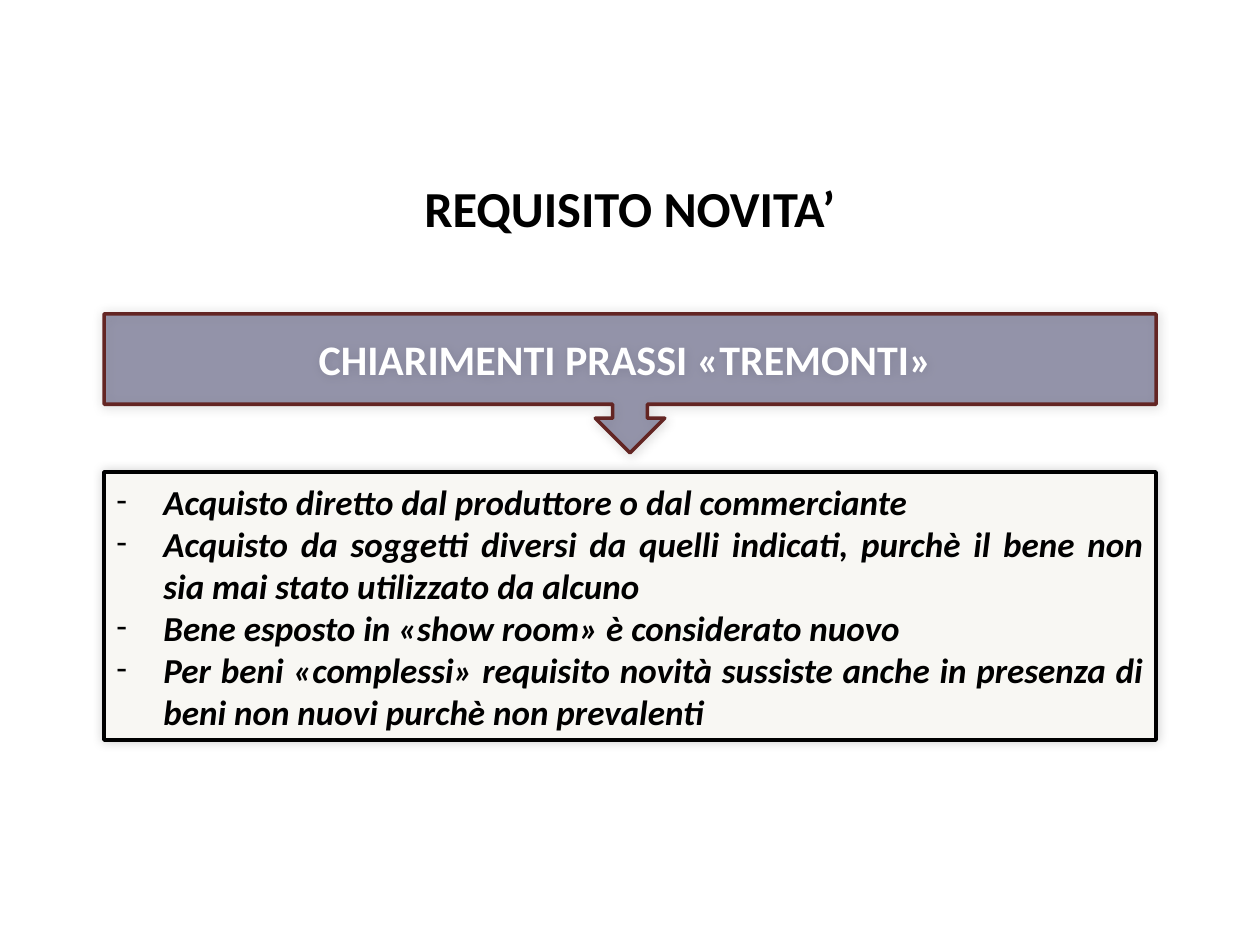
"""Build the slide on the novelty requirement, with a callout and a list of clarifications."""
from lxml import etree
from pptx import Presentation
from pptx import util as u
from pptx.dml.color import RGBColor
from pptx.enum import shapes, text
from pptx.oxml.ns import qn

PX = u.Inches(1) / 126
COLORS = {"black": "000000", "white": "FFFFFF", "navy": "19194D", "maroon": "632523", "cream": "F8F7F3"}
CLARIFICATIONS = [
    "Acquisto diretto dal produttore o dal commerciante",
    "Acquisto da soggetti diversi da quelli indicati, purchè il bene non sia mai stato utilizzato da alcuno",
    "Bene esposto in «show room» è considerato nuovo",
    "Per beni «complessi» requisito novità sussiste anche in presenza di beni non nuovi purchè non prevalenti",
]


def add_text(paragraph, words, size, color, alignment, italic=None):
    paragraph.alignment = alignment
    run = paragraph.add_run()
    run.text = words
    run.font.name = "Calibri"
    run.font.size = u.Pt(size)
    run.font.bold = True
    run.font.italic = italic
    run.font.color.rgb = RGBColor.from_string(COLORS[color])


def add_panel(slide, kind, box, fill, line):
    shape = slide.shapes.add_shape(kind, *[round(value * PX) for value in box])
    shape.fill.solid()
    shape.fill.fore_color.rgb = RGBColor.from_string(COLORS[fill])
    shape.line.color.rgb = RGBColor.from_string(COLORS[line])
    shape.line.width = u.Pt(2)
    shape.shadow.inherit = False
    effects = shape.element.spPr.find(qn("a:effectLst"))
    shadow = etree.SubElement(effects, qn("a:outerShdw"), blurRad=str(u.Pt(6)), dist="0",
                              dir=str(225 * 60000), algn="ctr", rotWithShape="0")
    shade = etree.SubElement(shadow, qn("a:srgbClr"), val=COLORS["black"])
    etree.SubElement(shade, qn("a:alpha"), val="20000")
    shape.text_frame.word_wrap = True
    shape.text_frame.vertical_anchor = text.MSO_ANCHOR.MIDDLE
    return shape


presentation = Presentation()
presentation.slide_width = round(1260 * PX)
presentation.slide_height = round(945 * PX)
slide = presentation.slides.add_slide(presentation.slide_layouts[6])

title = slide.shapes.add_textbox(0, round(169 * PX), round(1260 * PX), round(76 * PX))
title.text_frame.word_wrap = True
title.text_frame.vertical_anchor = text.MSO_ANCHOR.MIDDLE
add_text(title.text_frame.paragraphs[0], "REQUISITO NOVITA’", 28.8, "black", text.PP_ALIGN.CENTER)

callout = add_panel(slide, shapes.MSO_SHAPE.DOWN_ARROW_CALLOUT, (104, 314, 1052, 139), "navy", "maroon")
fill_color = callout.element.spPr.find(qn("a:solidFill")).find(qn("a:srgbClr"))
etree.SubElement(fill_color, qn("a:alpha"), val="41000")
add_text(callout.text_frame.paragraphs[0], "CHIARIMENTI PRASSI «TREMONTI» ", 24, "white", text.PP_ALIGN.CENTER)

panel = add_panel(slide, shapes.MSO_SHAPE.RECTANGLE, (104, 472, 1052, 268), "cream", "black")
for index, words in enumerate(CLARIFICATIONS):
    paragraph = panel.text_frame.add_paragraph() if index else panel.text_frame.paragraphs[0]
    properties = paragraph._p.get_or_add_pPr()
    properties.set("marL", str(round(47 * PX)))
    properties.set("indent", str(round(-47 * PX)))
    etree.SubElement(properties, qn("a:buFont"), typeface="Calibri")
    etree.SubElement(properties, qn("a:buChar"), char="-")
    add_text(paragraph, words, 20, "black", text.PP_ALIGN.JUSTIFY, italic=True)

presentation.save("out.pptx")
